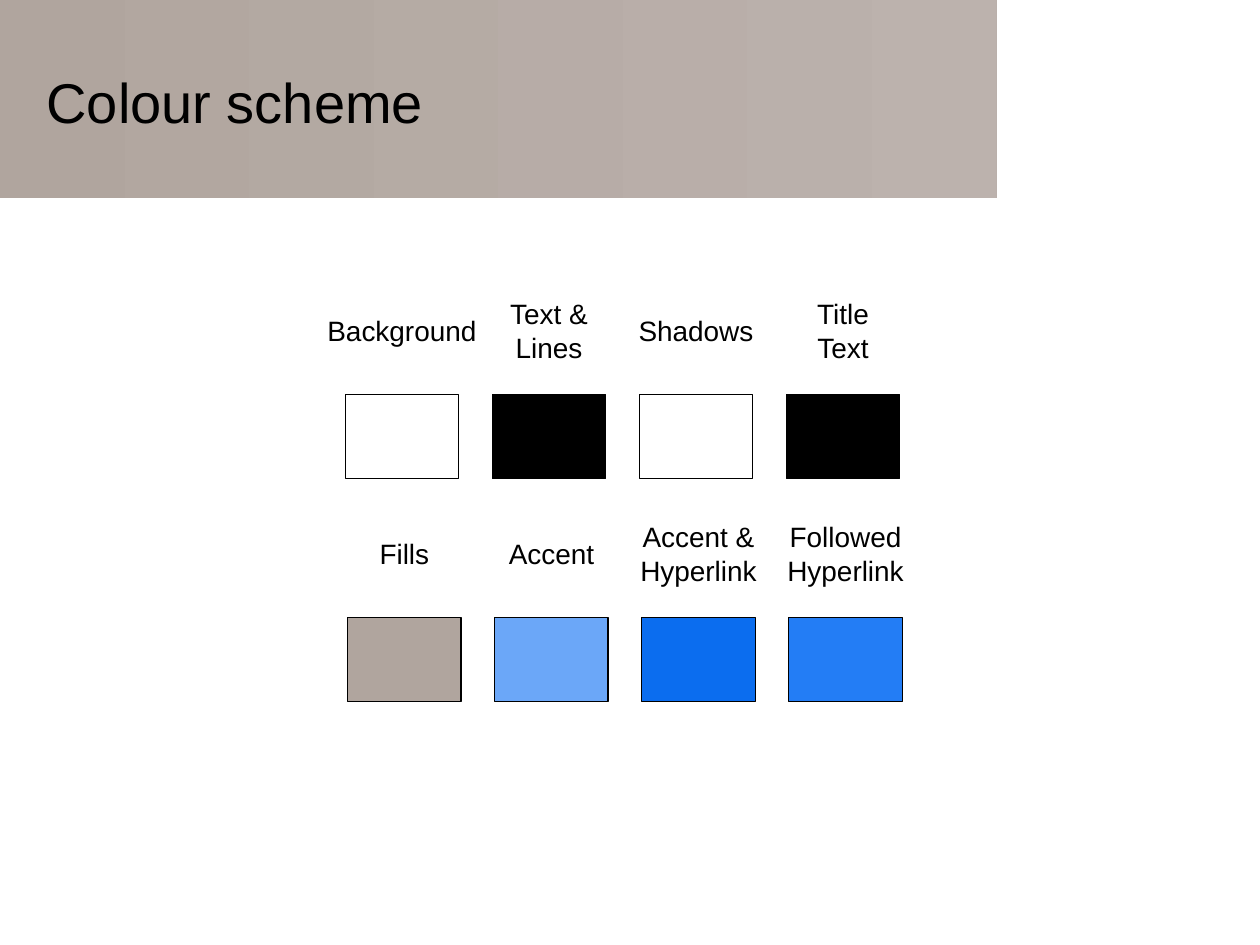
from pptx import Presentation
from pptx.dml.color import RGBColor
from pptx.enum.shapes import MSO_SHAPE
from pptx.enum.text import MSO_ANCHOR, PP_ALIGN
from pptx.util import Inches, Pt

RECTANGLE = MSO_SHAPE.RECTANGLE
MIDDLE = MSO_ANCHOR.MIDDLE
LEFT, CENTER = PP_ALIGN.LEFT, PP_ALIGN.CENTER

FONT = "Arial"
COLORS = {
    "white": "FFFFFF",
    "black": "000000",
    "taupe": "B0A59E",
    "pale taupe": "BCB2AD",
    "light blue": "6BA7F8",
    "strong blue": "0B6DEF",
    "bright blue": "237DF5",
}

# Swatch grid, in inches
SWATCH_W, SWATCH_H = 0.9, 0.67
COLUMN_PITCH = 1.167
LABEL_W, LABEL_H = 1.4, 0.64
LABEL_RISE = 0.83  # from the top of a label to the top of its swatch

# Left and top of each row, then its labels and fills
ROWS = [
    (2.74, 3.13, [("Background", "white"), ("Text &\nLines", "black"),
                  ("Shadows", "white"), ("Title\vText", "black")]),
    (2.76, 4.9, [("Fills", "taupe"), ("Accent", "light blue"),
                 ("Accent &\nHyperlink", "strong blue"),
                 ("Followed\nHyperlink", "bright blue")]),
]


def rgb(name):
    return RGBColor.from_string(COLORS[name])


def add_text(slide, text, left, top, width, height, size=16, align=CENTER, wrap=False):
    box = slide.shapes.add_textbox(
        Inches(left), Inches(top), Inches(width), Inches(height))
    frame = box.text_frame
    frame.word_wrap = wrap
    frame.vertical_anchor = MIDDLE
    frame.text = text
    for paragraph in frame.paragraphs:
        paragraph.alignment = align
        paragraph.font.name = FONT
        paragraph.font.size = Pt(size)
        paragraph.font.color.rgb = rgb("black")


def add_rectangle(slide, left, top, width, height):
    rectangle = slide.shapes.add_shape(
        RECTANGLE, Inches(left), Inches(top), Inches(width), Inches(height))
    rectangle.shadow.inherit = False
    return rectangle


def add_title_band(slide):
    band = add_rectangle(slide, 0, 0, 7.91, 1.57)
    band.line.fill.background()
    band.fill.gradient()
    band.fill.gradient_angle = 0
    for stop, color in zip(band.fill.gradient_stops, ("taupe", "pale taupe")):
        stop.color.rgb = rgb(color)


def add_swatch(slide, label, color, left, top):
    swatch = add_rectangle(slide, left, top, SWATCH_W, SWATCH_H)
    swatch.fill.solid()
    swatch.fill.fore_color.rgb = rgb(color)
    swatch.line.color.rgb = rgb("black")
    swatch.line.width = Pt(0.75)
    label_left = left + (SWATCH_W - LABEL_W) / 2
    add_text(slide, label, label_left, top - LABEL_RISE, LABEL_W, LABEL_H)


def main():
    prs = Presentation()
    prs.slide_width, prs.slide_height = Inches(10), Inches(7.5)
    slide = prs.slides.add_slide(prs.slide_layouts[6])
    slide.background.fill.solid()
    slide.background.fill.fore_color.rgb = rgb("white")

    # Title
    add_title_band(slide)
    add_text(slide, "Colour scheme", 0.27, 0.3, 7.48, 1.01,
             size=32, align=LEFT, wrap=True)

    # Labelled swatches
    for row_left, top, swatches in ROWS:
        for column, (label, color) in enumerate(swatches):
            add_swatch(slide, label, color, row_left + column * COLUMN_PITCH, top)

    prs.save("out.pptx")


if __name__ == "__main__":
    main()
